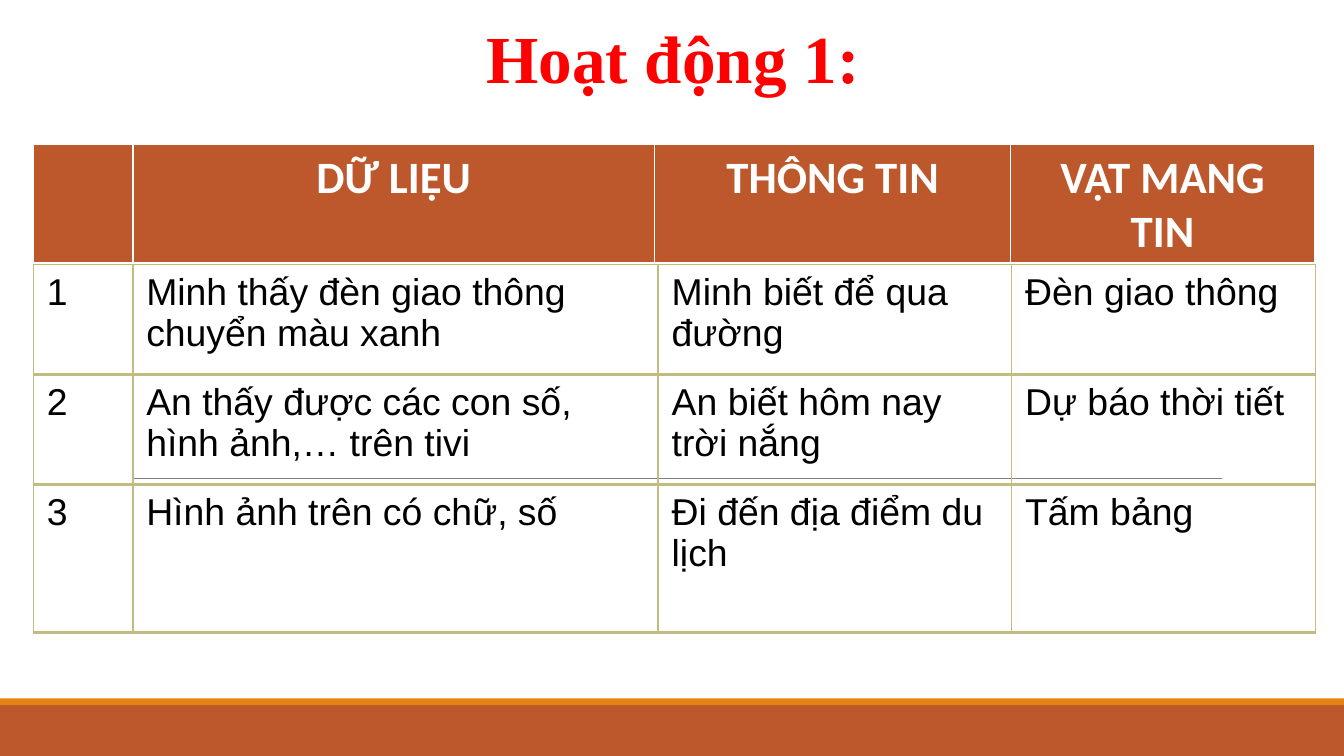
from lxml import etree
from pptx import Presentation
from pptx.dml.color import RGBColor
from pptx.enum.shapes import MSO_CONNECTOR, MSO_SHAPE
from pptx.enum.text import PP_ALIGN
from pptx.oxml.ns import qn
from pptx.util import Cm, Pt

RECT = MSO_SHAPE.RECTANGLE
LINE = MSO_CONNECTOR.STRAIGHT
LEFT, CENTER = PP_ALIGN.LEFT, PP_ALIGN.CENTER

COLORS = {
    "rust": "BD582C", "orange": "E48312", "gray": "808080", "red": "FF0000",
    "olive": "C2BC80", "white": "FFFFFF", "black": "000000",
}
WIDE, HIGH = 25.4, 14.29
HEAD = ["", "DỮ LIỆU", "THÔNG TIN", "VẬT MANG TIN"]
ROWS = [
    ["1", "Minh thấy đèn giao thông chuyển màu xanh",
     "Minh biết để qua đường", "Đèn giao thông"],
    ["2", "An thấy được các con số, hình ảnh,… trên tivi",
     "An biết hôm nay trời nắng", "Dự báo thời tiết"],
    ["3", "Hình ảnh trên có chữ, số", "Đi đến địa điểm du lịch", "Tấm bảng"],
]
HEAD_COLS = [1.88, 9.86, 6.73, 5.74]
BODY_COLS = [1.88, 9.93, 6.68, 5.74]
HEAD_LOOK = dict(font="Calibri", size=24, color="white", bold=True, align=CENTER)
BODY_LOOK = dict(font="Arial", size=20, color="black")


def rgb(name):
    return RGBColor.from_string(COLORS[name])


def write(frame, text, font, size, color, bold=False, align=LEFT):
    para = frame.paragraphs[0]
    para.alignment = align
    run = para.add_run()
    run.text = text
    run.font.name = font
    run.font.size = Pt(size)
    run.font.bold = bold
    run.font.color.rgb = rgb(color)


def edge(cell, color, base):
    """Draw all four cell borders, 1 pt except for the base."""
    props = cell._tc.get_or_add_tcPr()
    for i, side in enumerate("LRTB"):
        width = base if side == "B" else 1
        line = etree.Element(qn(f"a:ln{side}"), w=str(Pt(width)))
        fill = etree.SubElement(line, qn("a:solidFill"))
        etree.SubElement(fill, qn("a:srgbClr"), val=COLORS[color])
        props.insert(i, line)


def add_band(slide, box, color):
    shape = slide.shapes.add_shape(RECT, *map(Cm, box))
    shape.shadow.inherit = False
    shape.fill.solid()
    shape.fill.fore_color.rgb = rgb(color)
    shape.line.fill.background()


def add_rule(slide, left, right, top):
    line = slide.shapes.add_connector(LINE, Cm(left), Cm(top), Cm(right), Cm(top))
    line.line.color.rgb = rgb("gray")
    line.line.width = Pt(0.5)
    etree.SubElement(line._element.spPr, qn("a:effectLst"))


def add_title(slide, box, text):
    frame = slide.shapes.add_textbox(*map(Cm, box)).text_frame
    frame.word_wrap = True
    frame.margin_left = frame.margin_right = 0
    frame.margin_top = frame.margin_bottom = 0
    write(frame, text, "Times New Roman", 36, "red", True, CENTER)


def add_strip(slide, box, cols, texts, look, border, base, fill=None):
    """Add a table of one row."""
    table = slide.shapes.add_table(1, len(cols), *map(Cm, box)).table
    table.first_row = table.horz_banding = False
    for col, width in zip(table.columns, cols):
        col.width = Cm(width)
    for cell, text in zip(table.rows[0].cells, texts):
        if fill:
            cell.fill.solid()
            cell.fill.fore_color.rgb = rgb(fill)
        else:
            cell.fill.background()
        edge(cell, border, base)
        if text:
            write(cell.text_frame, text, **look)


def add_grid(slide, left, top):
    """Stack the header strip and one strip for each row."""
    high = 2.28
    add_strip(slide, (left, top, sum(HEAD_COLS), high), HEAD_COLS, HEAD,
              HEAD_LOOK, "white", 3, "rust")
    for texts, tall in zip(ROWS, [2.08, 2.08, 2.79]):
        top += high
        high = tall
        add_strip(slide, (left, top, sum(BODY_COLS), high), BODY_COLS, texts,
                  BODY_LOOK, "olive", 2)


def main():
    deck = Presentation()
    deck.slide_width, deck.slide_height = Cm(WIDE), Cm(HIGH)
    slide = deck.slides.add_slide(deck.slide_layouts[6])
    add_band(slide, (0, 13.33, WIDE, 0.96), "rust")
    add_band(slide, (0, 13.2, WIDE, 0.13), "orange")
    add_rule(slide, 2.51, 23.09, 9.04)
    add_title(slide, (1.37, 0.3, 22.7, 1.55), "Hoạt động 1:")
    add_grid(slide, 0.63, 2.72)
    deck.save("out.pptx")


if __name__ == "__main__":
    main()
